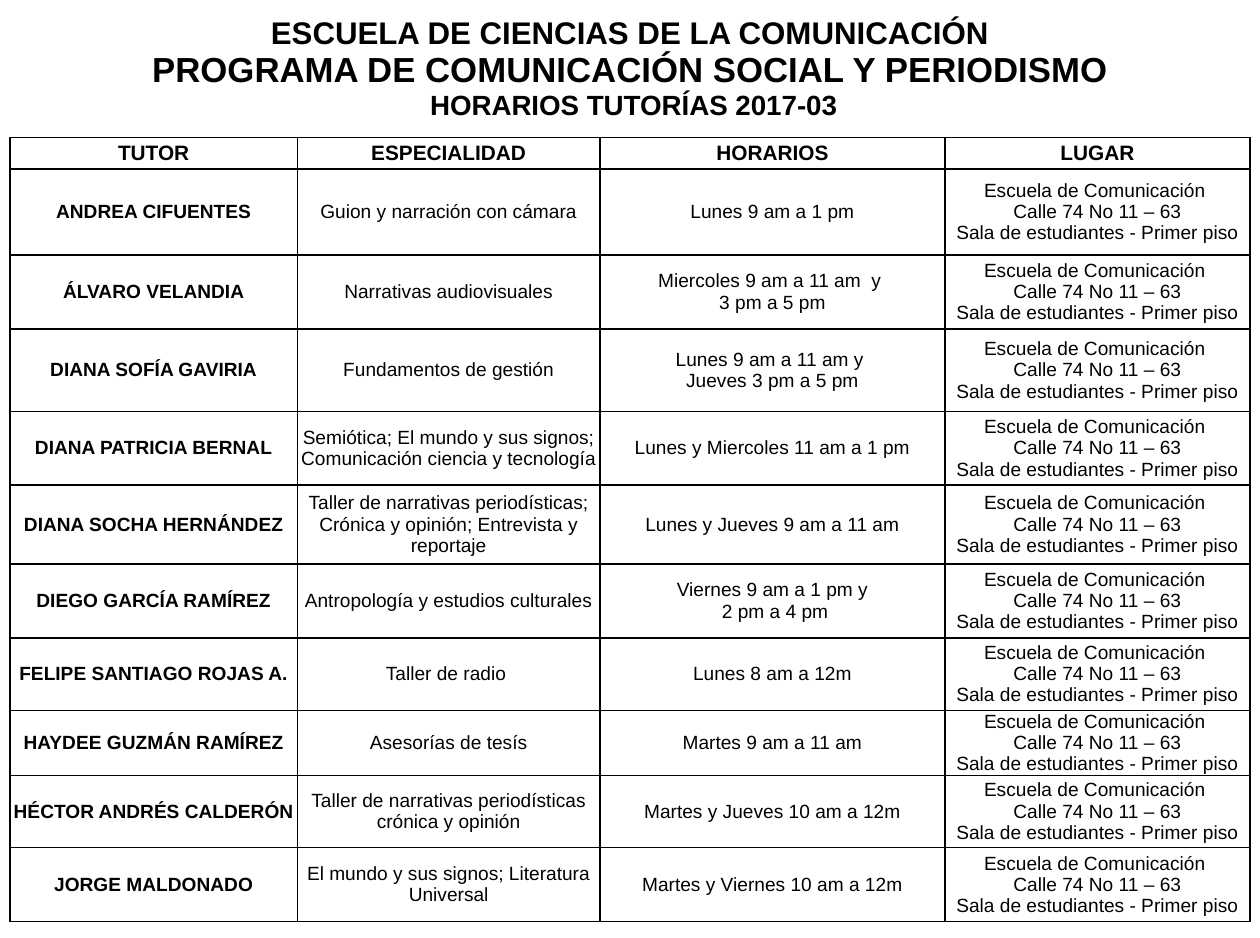
"""Build the 2017-03 tutoring timetable slide."""
from typing import NamedTuple

from lxml.etree import SubElement
from pptx import Presentation
from pptx.dml.color import RGBColor
from pptx.enum.text import MSO_ANCHOR, PP_ALIGN
from pptx.oxml.ns import qn
from pptx.table import _Cell
from pptx.util import Inches, Pt

BLACK = RGBColor(0, 0, 0)
FONT = "Arial"
SLIDE_WIDTH, SLIDE_HEIGHT = Inches(10.08), Inches(7.5)
LEFT_PERCENT = 0.79
COLUMN_PERCENTS = (22.82, 24.01, 27.38, 24.21)
TITLE_PERCENT, HEADING_PERCENT = 14.67, 3.33


class Line(NamedTuple):
    text: str
    size: int


class Tutoring(NamedTuple):
    tutor: str
    subject: str
    hours: tuple[str, ...]
    height_percent: float


TITLE = (
    Line("ESCUELA DE CIENCIAS DE LA COMUNICACIÓN", 18),
    Line("PROGRAMA DE COMUNICACIÓN SOCIAL Y PERIODISMO", 20),
    Line(" HORARIOS TUTORÍAS 2017-03", 16),
)
HEADINGS = ("TUTOR", "ESPECIALIDAD", "HORARIOS", "LUGAR")
PLACE = (
    "Escuela de Comunicación ",
    "Calle 74 No 11 – 63",
    "Sala de estudiantes - Primer piso",
)
TUTORINGS = (
    Tutoring("ANDREA CIFUENTES", "Guion y narración con cámara",
             ("Lunes 9 am a 1 pm",), 9.2),
    Tutoring("ÁLVARO VELANDIA", "Narrativas audiovisuales",
             ("Miercoles 9 am a 11 am  y ", "3 pm a 5 pm"), 7.87),
    Tutoring("DIANA SOFÍA GAVIRIA", "Fundamentos de gestión",
             ("Lunes 9 am a 11 am y ", "Jueves 3 pm a 5 pm"), 8.8),
    Tutoring("DIANA PATRICIA BERNAL",
             "Semiótica; El mundo y sus signos; Comunicación ciencia y tecnología",
             ("Lunes y Miercoles 11 am a 1 pm",), 7.87),
    Tutoring("DIANA SOCHA HERNÁNDEZ",
             "Taller de narrativas periodísticas; Crónica y opinión; Entrevista y reportaje",
             ("Lunes y Jueves 9 am a 11 am",), 8.4),
    Tutoring("DIEGO GARCÍA RAMÍREZ", "Antropología y estudios culturales",
             ("Viernes 9 am a 1 pm y", " 2 pm a 4 pm"), 7.87),
    Tutoring("FELIPE SANTIAGO ROJAS A.", "Taller de radio ",
             ("Lunes 8 am a 12m",), 7.73),
    Tutoring("HAYDEE GUZMÁN RAMÍREZ", "Asesorías de tesís",
             ("Martes 9 am a 11 am",), 6.93),
    Tutoring("HÉCTOR ANDRÉS CALDERÓN",
             "Taller de narrativas periodísticas crónica y opinión",
             ("Martes y Jueves 10 am a 12m",), 7.73),
    Tutoring("JORGE MALDONADO", "El mundo y sus signos; Literatura Universal",
             ("Martes y Viernes 10 am a 12m",), 7.87),
)


def across(percent: float) -> int:
    return round(SLIDE_WIDTH * percent / 100)


def down(percent: float) -> int:
    return round(SLIDE_HEIGHT * percent / 100)


def lines_of(*texts: str, size: int = 11) -> tuple[Line, ...]:
    return tuple(Line(text, size) for text in texts)


def write(cell: _Cell, lines: tuple[Line, ...], *, bold: bool = False) -> None:
    frame = cell.text_frame
    for index, line in enumerate(lines):
        paragraph = frame.add_paragraph() if index else frame.paragraphs[0]
        paragraph.alignment = PP_ALIGN.CENTER
        run = paragraph.add_run()
        run.text = line.text
        run.font.name = FONT
        run.font.size = Pt(line.size)
        run.font.bold = bold
        run.font.color.rgb = BLACK


def format_cell(cell: _Cell, ruled_sides: str) -> None:
    cell.vertical_anchor = MSO_ANCHOR.MIDDLE
    cell.margin_left = cell.margin_right = cell.margin_top = cell.margin_bottom = 0
    properties = cell._tc.get_or_add_tcPr()
    for side in "LRTB":
        border = SubElement(properties, qn(f"a:ln{side}"), w=str(Pt(1)))
        if side in ruled_sides:
            fill = SubElement(border, qn("a:solidFill"))
            SubElement(fill, qn("a:srgbClr"), val=str(BLACK))
        else:
            SubElement(border, qn("a:noFill"))
    cell.fill.background()


def main() -> None:
    presentation = Presentation()
    presentation.slide_width, presentation.slide_height = SLIDE_WIDTH, SLIDE_HEIGHT
    slide = presentation.slides.add_slide(presentation.slide_layouts[6])

    row_percents = (TITLE_PERCENT, HEADING_PERCENT,
                    *(tutoring.height_percent for tutoring in TUTORINGS))
    timetable = slide.shapes.add_table(
        len(row_percents), len(COLUMN_PERCENTS), across(LEFT_PERCENT), 0,
        across(sum(COLUMN_PERCENTS)), down(sum(row_percents))).table
    timetable.first_row = timetable.horz_banding = False
    for column, percent in zip(timetable.columns, COLUMN_PERCENTS):
        column.width = across(percent)
    for index, (row, percent) in enumerate(zip(timetable.rows, row_percents)):
        row.height = down(percent)
        for cell in row.cells:
            format_cell(cell, "LRTB" if index else "B")

    title = timetable.cell(0, 0)
    title.merge(timetable.cell(0, len(COLUMN_PERCENTS) - 1))
    write(title, TITLE, bold=True)
    for column, heading in enumerate(HEADINGS):
        write(timetable.cell(1, column), lines_of(heading, size=12), bold=True)
    for row, tutoring in enumerate(TUTORINGS, start=2):
        entries = ((tutoring.tutor,), (tutoring.subject,), tutoring.hours, PLACE)
        for column, texts in enumerate(entries):
            write(timetable.cell(row, column), lines_of(*texts), bold=column == 0)

    presentation.save("out.pptx")


if __name__ == "__main__":
    main()
